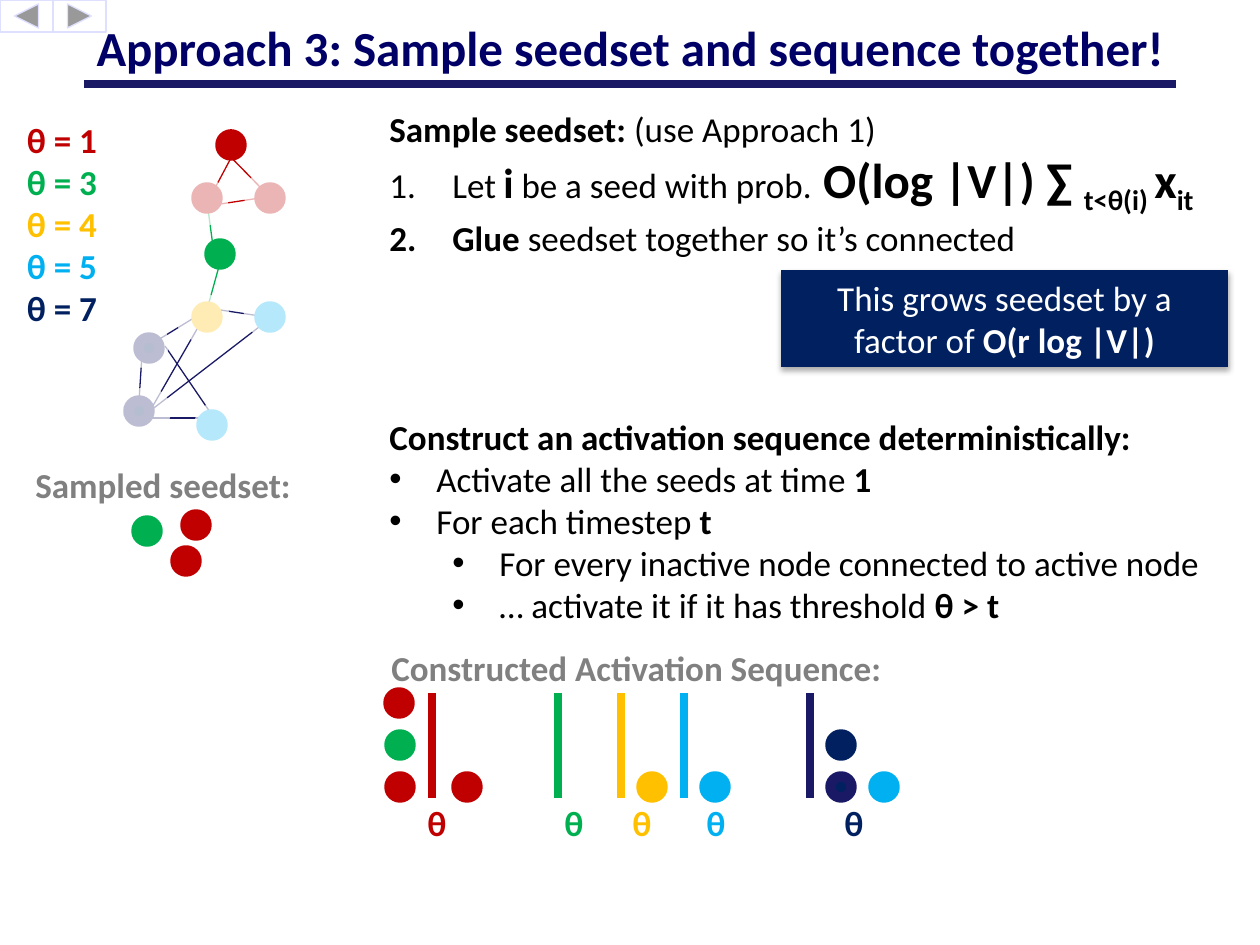
from lxml import etree
from pptx import Presentation
from pptx.dml.color import RGBColor
from pptx.enum.shapes import MSO_CONNECTOR, MSO_SHAPE
from pptx.enum.text import MSO_ANCHOR, PP_ALIGN
from pptx.oxml.ns import qn
from pptx.util import Emu, Pt

OVAL, RECT = MSO_SHAPE.OVAL, MSO_SHAPE.RECTANGLE
BACK = MSO_SHAPE.ACTION_BUTTON_BACK_OR_PREVIOUS
NEXT = MSO_SHAPE.ACTION_BUTTON_FORWARD_OR_NEXT
STRAIGHT = MSO_CONNECTOR.STRAIGHT
LEFT, CENTER = PP_ALIGN.LEFT, PP_ALIGN.CENTER
TOP, MIDDLE = MSO_ANCHOR.TOP, MSO_ANCHOR.MIDDLE

FONT = "Calibri"
COLORS = {
    "red": "C00000", "green": "00B050", "gold": "FFC000", "sky": "00B0F0",
    "navy": "002060", "indigo": "191966", "title": "000066", "gray": "808080",
    "black": "000000", "white": "FFFFFF", "lilac": "DFDFFF",
}
THRESHOLDS = {1: "red", 3: "green", 4: "gold", 5: "sky", 7: "navy"}
DOT = 21


def px(length):
    return Emu(round(length * 914400 / 126))


def rgb(name):
    return RGBColor.from_string(COLORS[name])


def add_xml(parent, tag, **attributes):
    values = {key: str(value) for key, value in attributes.items()}
    return etree.SubElement(parent, qn(tag), values)


def add_span(para, text, size=20, color="black", bold=False, baseline=0):
    span = para.add_run()
    span.text = text
    font = span.font
    font.name, font.size, font.bold = FONT, Pt(size), bold
    font.color.rgb = rgb(color)
    if baseline:
        font._element.set("baseline", str(baseline * 1000))


def add_para(frame, spans, align=LEFT, before=0, hang=None, bullet=None, level=0, tabs=()):
    """Fill the empty first paragraph, or add one; spans are (text, format) pairs."""
    first = frame.paragraphs[0]
    para = frame.add_paragraph() if first.runs else first
    para.alignment, para.level, para.space_before = align, level, Pt(before)
    properties = para._p.get_or_add_pPr()
    if hang:
        indent, first_line = hang
        properties.set("marL", str(px(indent)))
        properties.set("indent", str(px(-first_line)))
    if bullet == "1.":
        add_xml(properties, "a:buAutoNum", type="arabicPeriod")
    elif bullet:
        add_xml(properties, "a:buFont", typeface="Arial")
        add_xml(properties, "a:buChar", char=bullet)
    if tabs:
        tab_list = add_xml(properties, "a:tabLst")
        for stop in tabs:
            add_xml(tab_list, "a:tab", pos=px(stop), algn="l")
    for text, style in spans:
        add_span(para, text, **style)


def add_frame(page, box, anchor=TOP):
    frame = page.shapes.add_textbox(*map(px, box)).text_frame
    frame.word_wrap, frame.vertical_anchor = True, anchor
    return frame


def add_shape(page, kind, box, fill, line=None, width=0, alpha=None):
    shape = page.shapes.add_shape(kind, *map(px, box))
    shape.shadow.inherit = False
    shape.fill.solid()
    shape.fill.fore_color.rgb = rgb(fill)
    if alpha:
        color = shape.element.spPr.find(f"{qn('a:solidFill')}/{qn('a:srgbClr')}")
        add_xml(color, "a:alpha", val=alpha * 1000)
    if line:
        shape.line.color.rgb = rgb(line)
        shape.line.width = Pt(width)
    else:
        shape.line.fill.background()
    return shape


def add_dot(page, x, y, color, rim=None):
    box = (x - DOT / 2, y - DOT / 2, DOT, DOT)
    add_shape(page, OVAL, box, color, line=rim or color, width=6)


def add_line(page, start, end, color, width=0.75):
    line = page.shapes.add_connector(STRAIGHT, *map(px, (*start, *end)))
    line.line.color.rgb = rgb(color)
    line.line.width = Pt(width)
    add_xml(line.element.spPr, "a:effectLst")


def add_header(page, box):
    left, top, width, height = box
    # Navigation buttons
    for column, kind in enumerate((BACK, NEXT)):
        add_shape(page, kind, (left + 53 * column, top, 53, 32), "white", "lilac", 0.75)
    # Title and rule
    add_line(page, (left + 84, top + 84), (left + width - 84, top + 84), "indigo", 4.5)
    add_para(add_frame(page, box, MIDDLE),
             [("Approach 3: Sample seedset and sequence together!",
               dict(size=28, color="title", bold=True))], align=CENTER)


def add_legend(page, box):
    frame = add_frame(page, box)
    for threshold, color in THRESHOLDS.items():
        add_para(frame, [(f"θ = {threshold}", dict(color=color, bold=True))], align=CENTER)


def add_graph(page, box):
    left, top = box[:2]
    edges = {
        "indigo": [(92, 290, 45, 221), (84, 293, 27, 293), (30, 286, 143, 199),
                   (30, 286, 80, 199), (77, 191, 38, 215), (19, 276, 22, 230),
                   (94, 184, 140, 191)],
        "red": [(100, 21, 143, 65), (111, 33, 94, 65), (94, 80, 140, 73)],
        "green": [(100, 138, 88, 181), (88, 84, 93, 121)],
    }
    for color, lines in edges.items():
        for x1, y1, x2, y2 in lines:
            add_line(page, (left + x1, top + y1), (left + x2, top + y2), color)
    nodes = [(150, 73, "red"), (19, 286, "navy", "indigo"), (29, 223, "navy", "indigo"),
             (100, 129, "green"), (87, 73, "red"), (87, 192, "gold"),
             (150, 192, "sky"), (111, 20, "red"), (92, 300, "sky")]
    for x, y, *colors in nodes:
        add_dot(page, left + x, top + y, *colors)
    # Translucent veils over the nodes that were not sampled
    veils = [(27, 286, 48), (148, 189, 48), (84, 77, 48), (148, 70, 48),
             (83, 193, 54), (25, 219, 48), (98, 301, 48)]
    for x, y, width in veils:
        add_shape(page, OVAL, (left + x - width / 2, top + y - 24, width, 48),
                  "white", alpha=71)


def add_seedset(page, box):
    left, top = box[:2]
    add_para(add_frame(page, box), [("Sampled seedset:", dict(color="gray", bold=True))])
    for x, y, color in [(163, 104, "red"), (124, 74, "green"), (173, 68, "red")]:
        add_dot(page, left + x, top + y, color)


def add_algorithm(page, box):
    frame = add_frame(page, box)
    bold, big = dict(bold=True), dict(size=28, bold=True)
    low = dict(size=28, bold=True, baseline=-25)
    step = dict(hang=(63, 63), bullet="1.")
    point = dict(hang=(47, 47), bullet="•")
    subpoint = dict(hang=(110, 47), bullet="•", level=1)
    # Sampling steps
    add_para(frame, [("Sample seedset: ", bold), ("(use Approach 1)", {})])
    add_para(frame, [("Let", {}), (" ", dict(size=18)), ("i", dict(size=24, bold=True)),
                     (" be a seed with prob.", {}), (" O(log |V|) ∑ ", big),
                     ("t<θ(i) ", low), ("x", big), ("it", low)], **step)
    add_para(frame, [("Glue ", bold), ("seedset together so it’s connected", {})], **step)
    # Activation steps
    add_para(frame, [("Construct an activation sequence deterministically:", bold)], before=90)
    add_para(frame, [("Activate all the seeds at time ", {}), ("1", bold)], **point)
    add_para(frame, [("For each timestep ", {}), ("t", bold)], **point)
    add_para(frame, [("For every inactive node connected to active node", {})], **subpoint)
    add_para(frame, [("… activate it if it has threshold ", {}), ("θ > t", bold)], **subpoint)


def add_callout(page, box):
    shape = add_shape(page, RECT, box, "navy")
    shadow = add_xml(shape.element.spPr.find(qn("a:effectLst")), "a:outerShdw",
                     blurRad=Pt(3.5), dist=Pt(2.2), dir=5400000, rotWithShape=0)
    color = add_xml(shadow, "a:srgbClr", val=COLORS["black"])
    add_xml(color, "a:alpha", val=32000)
    shape.text_frame.word_wrap = True
    add_para(shape.text_frame, [("This grows seedset by a factor of ", dict(color="white")),
                                ("O(r log |V|)", dict(color="white", bold=True))], align=CENTER)


def add_sequence(page, box):
    left, top, width, height = box
    add_para(add_frame(page, (left + 11, top, width, 56)),
             [("Constructed Activation Sequence:", dict(color="gray", bold=True))])
    # One bar for each threshold, placed on the time axis
    for threshold, color in THRESHOLDS.items():
        x = left + 64 + 63 * (threshold - 1)
        bar = "indigo" if color == "navy" else color
        add_line(page, (x, top + 53), (x, top + 158), bar, 4.5)
    # Nodes as (x, row from the top, colours)
    nodes = [(31, 0, "red"), (32, 1, "green"), (32, 2, "red"), (99, 2, "red"),
             (284, 2, "gold"), (347, 2, "sky"), (473, 1, "navy"),
             (473, 2, "navy", "indigo"), (516, 2, "sky")]
    for x, row, *colors in nodes:
        add_dot(page, left + x, top + 63 + 42 * row, *colors)
    # Axis labels on tab stops
    add_para(add_frame(page, (left, top + 155, width, 56)),
             [("\tθ", dict(color=color, bold=True)) for color in THRESHOLDS.values()],
             tabs=(47, 184, 252, 326, 464))


def main():
    deck = Presentation()
    deck.slide_width, deck.slide_height = px(1260), px(945)
    page = deck.slides.add_slide(deck.slide_layouts[6])
    add_header(page, (0, 0, 1260, 94))
    add_algorithm(page, (377, 101, 873, 568))
    add_graph(page, (120, 125, 170, 320))
    add_legend(page, (0, 112, 124, 224))
    add_sequence(page, (368, 640, 556, 211))
    add_seedset(page, (23, 457, 325, 120))
    add_callout(page, (781, 270, 447, 97))
    deck.save("out.pptx")


if __name__ == "__main__":
    main()
